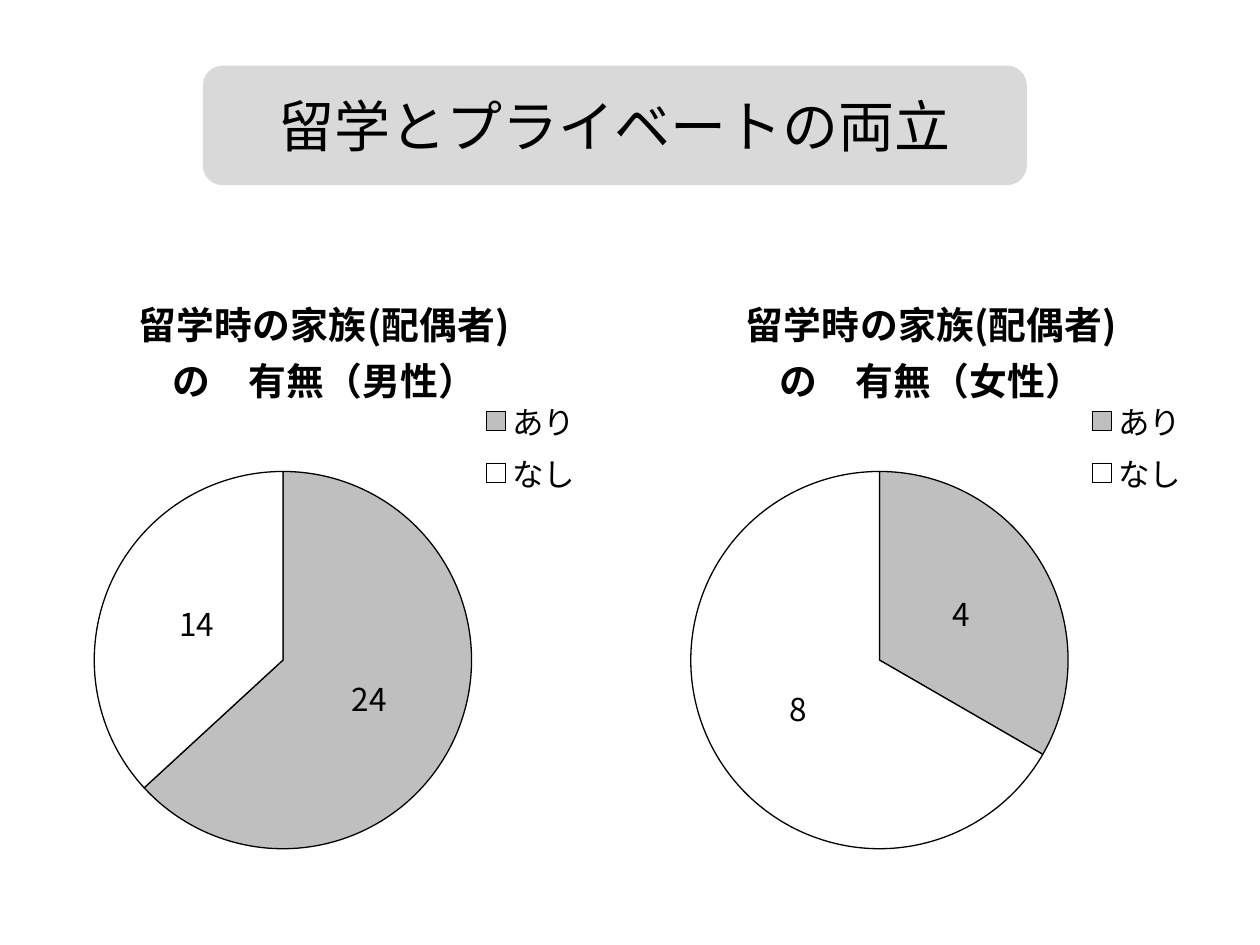
import pptx
import pptx.chart.data
import pptx.dml.color
import pptx.enum.chart
import pptx.enum.shapes
import pptx.enum.text
import pptx.oxml
import pptx.oxml.ns
from pptx.util import Inches, Pt

COLORS = {"banner": "D9D9D9", "yes": "BFBFBF", "no": "FFFFFF", "ink": "000000"}
FONT = "Noto Sans CJK JP"


def style_font(font, size, bold=False):
    font.name = FONT
    font.size = Pt(size)
    font.bold = bold
    font.color.rgb = pptx.dml.color.RGBColor.from_string(COLORS["ink"])


def set_layout(element, box, inner=False):
    """Place a chart part by fractions of the chart; a size is optional."""
    for old in element.findall(pptx.oxml.ns.qn("c:layout")):
        element.remove(old)
    parts = '<c:layoutTarget val="inner"/>' if inner else ""
    parts += '<c:xMode val="edge"/><c:yMode val="edge"/>'
    parts += "".join(f'<c:{n} val="{v}"/>' for n, v in zip("xywh", box))
    layout = pptx.oxml.parse_xml(
        f'<c:layout {pptx.oxml.ns.nsdecls("c")}>'
        f"<c:manualLayout>{parts}</c:manualLayout></c:layout>")
    # A layout follows the title text or legend position, and opens the plot area
    element.insert(0 if inner else 1, layout)


prs = pptx.Presentation()
prs.slide_width, prs.slide_height = Inches(10), Inches(7.5)
s = prs.slides.add_slide(prs.slide_layouts[6])

# Heading banner
sp = s.shapes.add_shape(pptx.enum.shapes.MSO_SHAPE.ROUNDED_RECTANGLE,
                        Inches(1.61), Inches(0.52), Inches(6.54), Inches(0.95))
sp.shadow.inherit = False
sp.fill.solid()
sp.fill.fore_color.rgb = pptx.dml.color.RGBColor.from_string(COLORS["banner"])
sp.line.fill.background()
tf = sp.text_frame
tf.vertical_anchor = pptx.enum.text.MSO_ANCHOR.MIDDLE
p = tf.paragraphs[0]
p.text = "留学とプライベートの両立"
p.alignment = pptx.enum.text.PP_ALIGN.CENTER
style_font(p.font, 32)

# One pie per gender: name, left, width, values, plot, title and legend places
pies = [
    ("男性", 0.35, 4.8, (24, 14), (0.08, 0.34, 0.63, 0.62), (0.15, 0.04), (0.7, 0.21, 0.21, 0.18)),
    ("女性", 5.24, 4.64, (4, 8), (0.05, 0.34, 0.65, 0.62), (0.14, 0.04), (0.71, 0.21, 0.21, 0.18)),
]
for gender, left, width, values, plot_box, title_at, legend_box in pies:
    data = pptx.chart.data.CategoryChartData()
    data.categories = ["あり", "なし"]
    data.add_series("Series 1", values)
    chart = s.shapes.add_chart(pptx.enum.chart.XL_CHART_TYPE.PIE, Inches(left), Inches(2.1),
                               Inches(width), Inches(4.83), data).chart
    style_font(chart.font, 18)

    # Title on two lines
    tf = chart.chart_title.text_frame
    tf.text = f"留学時の家族(配偶者)\nの　有無（{gender}）"
    for p in tf.paragraphs:
        p.alignment = pptx.enum.text.PP_ALIGN.CENTER
        style_font(p.font, 21.6, bold=True)
    set_layout(chart.chart_title._element, title_at)

    # Legend
    chart.has_legend = True
    chart.legend.position = pptx.enum.chart.XL_LEGEND_POSITION.RIGHT
    chart.legend.include_in_layout = False
    style_font(chart.legend.font, 18)
    set_layout(chart.legend._element, legend_box)

    # Slices and value labels
    plot = chart.plots[0]
    plot.vary_by_categories = True
    set_layout(plot._element.getparent(), plot_box, inner=True)
    for i, key in enumerate(("yes", "no")):
        fmt = plot.series[0].points[i].format
        fmt.fill.solid()
        fmt.fill.fore_color.rgb = pptx.dml.color.RGBColor.from_string(COLORS[key])
        fmt.line.color.rgb = pptx.dml.color.RGBColor.from_string(COLORS["ink"])
        fmt.line.width = Pt(0.75)
    plot.has_data_labels = True
    labels = plot.data_labels
    labels.show_value = True
    labels.show_percentage = False
    labels.position = pptx.enum.chart.XL_LABEL_POSITION.CENTER
    style_font(labels.font, 18)

prs.save("out.pptx")
